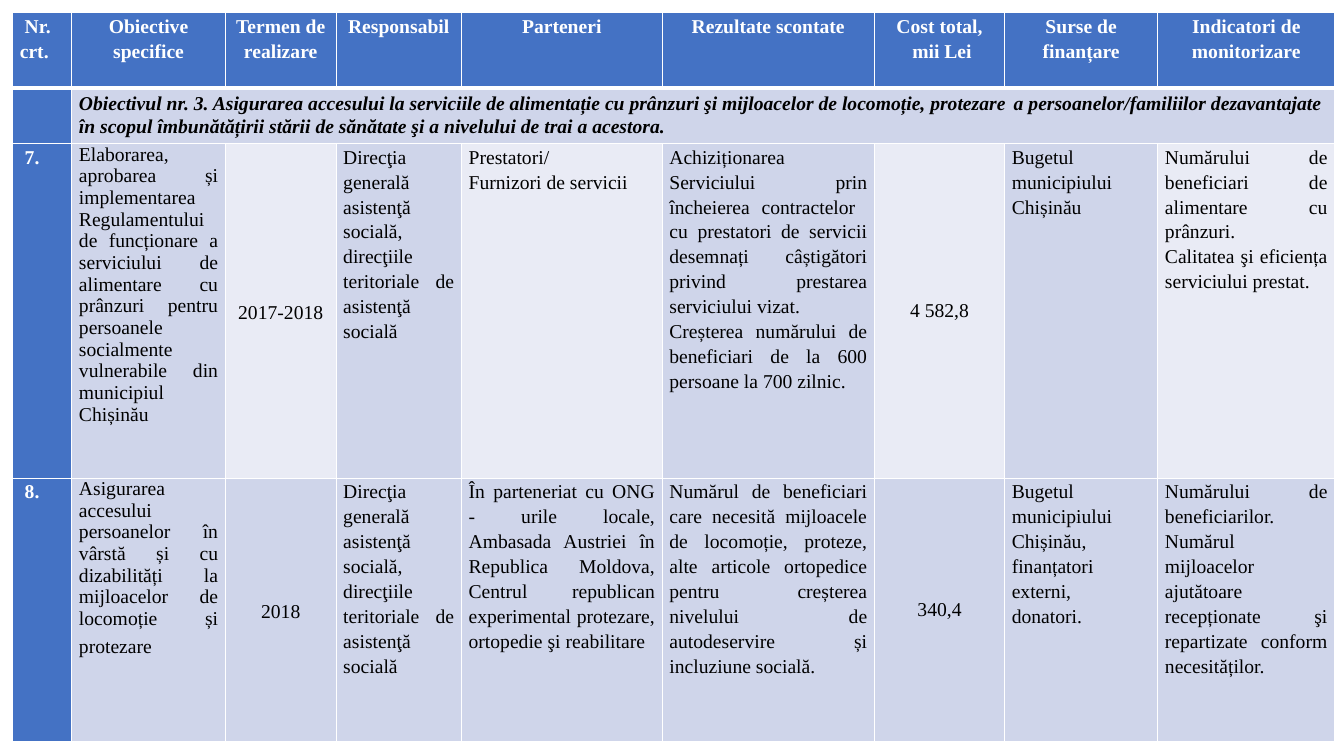
from dataclasses import dataclass

from lxml import etree
from pptx import Presentation
from pptx.dml.color import RGBColor as RGB
from pptx.enum.text import MSO_ANCHOR as ANCHOR, PP_ALIGN as ALIGN
from pptx.oxml.ns import qn
from pptx.util import Cm, Pt


@dataclass(frozen=True)
class Theme:
    font: str = "Times New Roman"
    space_font: str = "Calibri"
    size: int = 14
    space_size: int = 18
    white: str = "FFFFFF"
    black: str = "000000"
    blue: str = "4472C4"
    band: str = "CFD5EA"
    pale: str = "E9EBF5"


T = Theme()
COLS = [1.49, 3.87, 2.79, 3.16, 5.06, 5.35, 3.28, 3.86, 4.46]
ROWS = [1.9, 1.4, 8.43, 6.65]
NUMBER, GOAL, TERM, COST, SOURCE = 0, 1, 2, 6, 7

HEADERS = [
    "\u00a0Nr.\ncrt.".replace("\u00a0", " "), "Obiective specifice", "Termen de realizare",
    "Responsabil", "Parteneri", "Rezultate scontate", "Cost total,\n mii Lei",
    "Surse de finanțare", "Indicatori de monitorizare",
]
OBJECTIVE = [
    "Obiectivul nr. 3. Asigurarea accesului la serviciile de alimentație cu prânzuri "
    "şi mijloacelor de locomoție, protezare",
    " ",
    "a persoanelor/familiilor dezavantajate în scopul îmbunătățirii stării de sănătate "
    "şi a nivelului de trai a acestora.",
]
RESPONSIBLE = ("Direcţia generală asistenţă socială, direcţiile teritoriale "
               "de asistenţă socială")
ACTIONS = [
    [
        " 7.",
        "Elaborarea, aprobarea și implementarea Regulamentului de funcționare a "
        "serviciului de alimentare cu prânzuri pentru persoanele socialmente "
        "vulnerabile din municipiul Chișinău",
        "2017-2018",
        RESPONSIBLE,
        "Prestatori/\nFurnizori de servicii",
        "Achiziționarea Serviciului prin încheierea contractelor  cu prestatori de "
        "servicii desemnați câștigători privind prestarea serviciului vizat.\n"
        "Creșterea numărului de beneficiari de la 600 persoane la 700 zilnic.",
        "4 582,8",
        "Bugetul municipiului Chișinău",
        "Numărului de beneficiari de alimentare cu prânzuri.\n"
        "Calitatea şi eficiența serviciului prestat.",
    ],
    [
        " 8.",
        "Asigurarea accesului persoanelor în vârstă și cu dizabilități la "
        "mijloacelor de locomoție și protezare",
        "2018",
        RESPONSIBLE,
        "În parteneriat cu ONG - urile locale, Ambasada Austriei în Republica Moldova, "
        "Centrul republican experimental protezare, ortopedie şi reabilitare",
        "Numărul de beneficiari care necesită mijloacele de locomoție, proteze, alte "
        "articole ortopedice pentru creșterea nivelului de autodeservire și incluziune "
        "socială.",
        "340,4",
        "Bugetul municipiului Chișinău, finanțatori externi,\ndonatori.",
        "Numărului de beneficiarilor. Numărul mijloacelor ajutătoare recepționate şi "
        "repartizate conform necesităților.",
    ],
]


def write(cell, text, align=ALIGN.LEFT, spacing=1.15, color=T.black, bold=False,
          italic=False, anchor=ANCHOR.TOP, inset=0.18):
    cell.margin_left = cell.margin_right = Cm(inset)
    cell.margin_top = cell.margin_bottom = 0
    cell.vertical_anchor = anchor
    tf = cell.text_frame
    for i, line in enumerate(text.split("\n")):
        p = tf.add_paragraph() if i else tf.paragraphs[0]
        p.alignment, p.line_spacing = align, spacing
        add_run(p, line, color=color, bold=bold, italic=italic)


def add_run(p, text, color=T.black, bold=False, italic=False, size=T.size, font=T.font):
    r = p.add_run()
    r.text = text
    r.font.name, r.font.size = font, Pt(size)
    r.font.bold, r.font.italic = bold, italic
    r.font.color.rgb = RGB.from_string(color)


prs = Presentation()
prs.slide_width, prs.slide_height = Cm(33.87), Cm(19.05)
s = prs.slides.add_slide(prs.slide_layouts[6])
table = s.shapes.add_table(len(ROWS), len(COLS), Cm(0.32), Cm(0.32),
                           Cm(sum(COLS)), Cm(sum(ROWS))).table
for column, width in zip(table.columns, COLS):
    column.width = Cm(width)
for row, height in zip(table.rows, ROWS):
    row.height = Cm(height)

# Borders and fills
for r in range(len(ROWS)):
    for c in range(len(COLS)):
        cell = table.cell(r, c)
        tcPr = cell._tc.get_or_add_tcPr()
        for side in "LRTB":
            thick = (r, side) in ((0, "B"), (1, "T"))
            ln = etree.SubElement(tcPr, qn(f"a:ln{side}"), w=str(Pt(3 if thick else 1)))
            fill = etree.SubElement(ln, qn("a:solidFill"))
            etree.SubElement(fill, qn("a:srgbClr"), val=T.white)
        if r == 0 or c == NUMBER:
            color = T.blue
        else:
            color = T.pale if r == 2 and c % 2 == 0 else T.band
        cell.fill.solid()
        cell.fill.fore_color.rgb = RGB.from_string(color)

# Header row
for c, header in enumerate(HEADERS):
    write(table.cell(0, c), header, color=T.white, bold=True,
          align=ALIGN.LEFT if c == NUMBER else ALIGN.CENTER)

# Objective row
objective = table.cell(1, GOAL)
objective.merge(table.cell(1, len(COLS) - 1))
write(objective, OBJECTIVE[0], spacing=1.0, bold=True, italic=True)
for text, size in zip(OBJECTIVE[1:], (T.space_size, T.size)):
    add_run(objective.text_frame.paragraphs[0], text, bold=True, italic=True, size=size)

# Action rows
COLUMN_FORMATS = {
    NUMBER: dict(align=ALIGN.LEFT, color=T.white, bold=True),
    GOAL: dict(spacing=1.0),
    TERM: dict(align=ALIGN.CENTER, anchor=ANCHOR.MIDDLE),
    COST: dict(align=ALIGN.CENTER, anchor=ANCHOR.MIDDLE, spacing=1.0, inset=0.03),
}
for r, action in enumerate(ACTIONS, start=2):
    for c, text in enumerate(action):
        fmt = dict(align=ALIGN.JUSTIFY) | COLUMN_FORMATS.get(c, {})
        if (r, c) == (3, SOURCE):
            fmt["align"] = ALIGN.LEFT
        write(table.cell(r, c), text, **fmt)
add_run(table.cell(3, GOAL).text_frame.paragraphs[0], " ",
        size=T.space_size, font=T.space_font)

prs.save("out.pptx")
